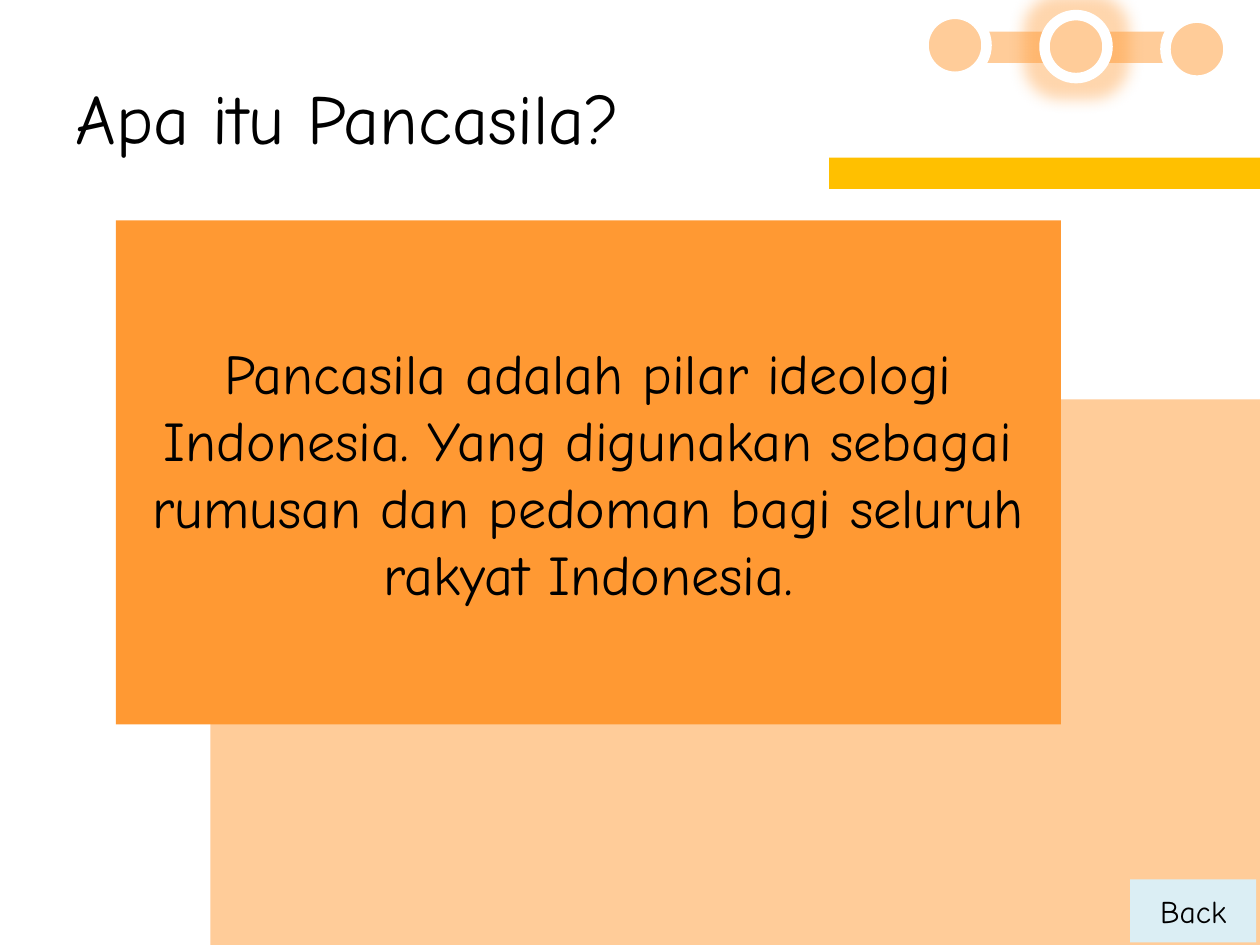
"""Build the slide that explains what Pancasila is."""
import pptx
import pptx.dml.color
import pptx.enum.shapes
import pptx.enum.text
import pptx.oxml
import pptx.oxml.ns
import pptx.util

Inches, Pt = pptx.util.Inches, pptx.util.Pt
RGBColor = pptx.dml.color.RGBColor
Shape = pptx.enum.shapes.MSO_SHAPE
Align = pptx.enum.text.PP_ALIGN
Anchor = pptx.enum.text.MSO_ANCHOR

BLACK = RGBColor(0x00, 0x00, 0x00)
WHITE = RGBColor(0xFF, 0xFF, 0xFF)
PEACH = RGBColor(0xFF, 0xCC, 0x99)
ORANGE = RGBColor(0xFF, 0x99, 0x33)
AMBER = RGBColor(0xFF, 0xC0, 0x00)
ICE = RGBColor(0xDB, 0xEE, 0xF4)

HEADING = "Apa itu Pancasila?"
DEFINITION = ("Pancasila adalah pilar ideologi Indonesia. Yang digunakan sebagai "
              "rumusan dan pedoman bagi seluruh rakyat Indonesia.")
PANELS = [
    ((1.67, 3.17, 8.33, 4.33), PEACH, "", 0),
    ((0.92, 1.75, 7.5, 4), ORANGE, DEFINITION, 32),
    ((6.58, 1.25, 3.42, 0.25), AMBER, "", 0),
    ((8.97, 6.98, 1, 0.5), ICE, "Back", 18),
    ((7.33, 0.25, 2.42, 0.25), PEACH, "", 0),
]
BEAD_SIZE = 0.5
BEADS = [(8.29, 0.12, True), (9.25, 0.14, False), (7.33, 0.11, False)]
GLOW = ('<a:glow %s rad="228600"><a:srgbClr val="FF9933">'
        '<a:alpha val="40000"/></a:srgbClr></a:glow>' % pptx.oxml.ns.nsdecls("a"))


def write(frame, words, size, align):
    frame.word_wrap = True
    frame.vertical_anchor = Anchor.MIDDLE
    paragraph = frame.paragraphs[0]
    paragraph.alignment = align
    run = paragraph.add_run()
    run.text = words
    for name, value in {"name": "Comic Neue", "size": Pt(size)}.items():
        setattr(run.font, name, value)
    run.font.color.rgb = BLACK


def add_filled(slide, kind, box, color):
    shape = slide.shapes.add_shape(kind, *map(Inches, box))
    shape.shadow.inherit = False
    shape.fill.solid()
    shape.fill.fore_color.rgb = color
    shape.line.fill.background()
    return shape


def main():
    deck = pptx.Presentation()
    deck.slide_width, deck.slide_height = Inches(10), Inches(7.5)
    slide = deck.slides.add_slide(deck.slide_layouts[5])

    heading = slide.shapes.title
    place = {"left": 0.5, "top": 0.3, "width": 9, "height": 1.25}
    for name, value in place.items():
        setattr(heading, name, Inches(value))
    write(heading.text_frame, HEADING, 40, Align.LEFT)

    for box, color, words, size in PANELS:
        panel = add_filled(slide, Shape.RECTANGLE, box, color)
        if words:
            write(panel.text_frame, words, size, Align.CENTER)

    for left, top, glowing in BEADS:
        bead = add_filled(slide, Shape.OVAL, (left, top, BEAD_SIZE, BEAD_SIZE), PEACH)
        bead.line.color.rgb = WHITE
        bead.line.width = Pt(6)
        if glowing:
            effects = bead.element.spPr.find(pptx.oxml.ns.qn("a:effectLst"))
            effects.append(pptx.oxml.parse_xml(GLOW))

    deck.save("out.pptx")


if __name__ == "__main__":
    main()
